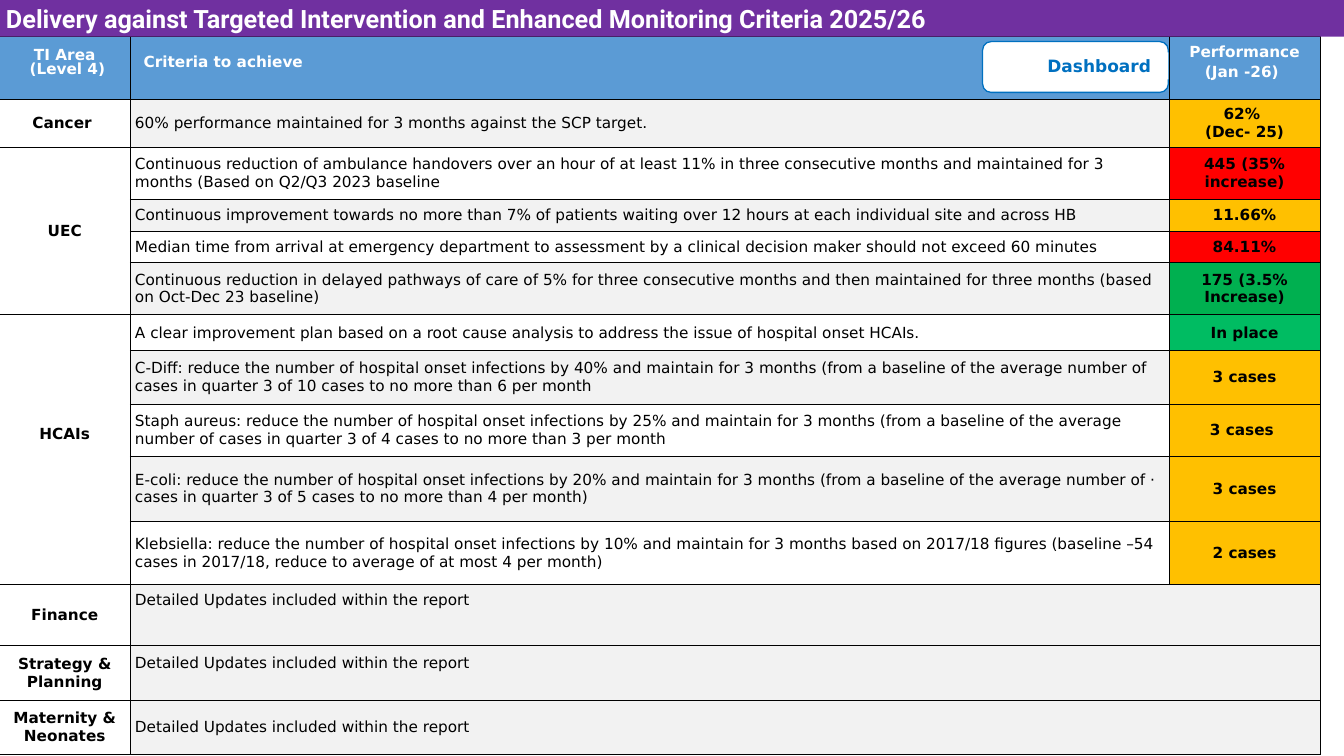
from lxml import etree
from pptx import Presentation
from pptx.dml.color import RGBColor
from pptx.enum import shapes, text
from pptx.oxml import ns
from pptx.util import Cm, Pt

WHITE = RGBColor(0xFF, 0xFF, 0xFF)
BLACK = RGBColor(0, 0, 0)
GREY = RGBColor(0xF2, 0xF2, 0xF2)
BLUE = RGBColor(0x5B, 0x9B, 0xD5)
NAVY = RGBColor(0x00, 0x70, 0xC0)
PURPLE = RGBColor(0x70, 0x30, 0xA0)
AMBER = RGBColor(0xFF, 0xC0, 0x00)
RED = RGBColor(0xFF, 0, 0)
GREEN = RGBColor(0x00, 0xB0, 0x50)
JADE = RGBColor(0x00, 0xBC, 0x62)

SANS = "DejaVu Sans"
COLS = [5.44, 43.18, 6.27]
UPDATE = "Detailed Updates included within the report"
HEAD = ["TI Area\n (Level 4)", "Criteria to achieve", "Performance\n(Jan -26) "]

# Row height, area, criterion, criterion fill, result, result fill
ROWS = [
    (2.01, "Cancer ", "60% performance maintained for 3 months against the SCP target.",
     GREY, "62% \n(Dec- 25)", AMBER),
    (2.16, "UEC", "Continuous reduction of ambulance handovers over an hour of at least 11% in "
     "three consecutive months and maintained for 3 months (Based on Q2/Q3 2023 baseline",
     WHITE, "445 (35% increase)", RED),
    (1.32, "", "Continuous improvement towards no more than 7% of patients waiting over 12 hours "
     "at each individual site and across HB", GREY, "11.66%", AMBER),
    (1.32, "", "Median time from arrival at emergency department to assessment by a clinical "
     "decision maker should not exceed 60 minutes", WHITE, "84.11%", RED),
    (2.16, "", "Continuous reduction in delayed pathways of care of 5% for three consecutive "
     "months and then maintained for three months (based on Oct-Dec 23 baseline)",
     GREY, "175 (3.5% Increase)", GREEN),
    (1.5, "HCAIs", "A clear improvement plan based on a root cause analysis to address the issue "
     "of hospital onset HCAIs.", WHITE, "In place", JADE),
    (2.21, "", "C-Diff: reduce the number of hospital onset infections by 40% and maintain for 3 "
     "months (from a baseline of the average number of cases in quarter 3 of 10 cases to no more "
     "than 6 per month", GREY, "3 cases", AMBER),
    (2.18, "", "Staph aureus: reduce the number of hospital onset infections by 25% and maintain "
     "for 3 months (from a baseline of the average number of cases in quarter 3 of 4 cases to no "
     "more than 3 per month", WHITE, "3 cases ", AMBER),
    (2.69, "", "E-coli: reduce the number of hospital onset infections by 20% and maintain for 3 "
     "months (from a baseline of the average number of · cases in quarter 3 of 5 cases to no more "
     "than 4 per month)", GREY, "3 cases", AMBER),
    (2.64, "", "Klebsiella: reduce the number of hospital onset infections by 10% and maintain "
     "for 3 months based on 2017/18 figures (baseline –54 cases in 2017/18, reduce to average of "
     "at most 4 per month)", WHITE, "2 cases", AMBER),
    (1.32, "Finance", UPDATE, GREY, "", GREY),
    (1.22, "", "", GREY, "", GREY),
    (2.26, "Strategy & Planning", UPDATE, GREY, "", GREY),
    (2.26, "Maternity & Neonates", UPDATE, GREY, "", GREY),
]
# First row, first column, last row, last column
SPANS = [(2, 0, 5, 0), (6, 0, 10, 0), (11, 0, 12, 0)] + [(r, 1, r, 2) for r in range(11, 15)]
FIN = 11  # first of the two finance rows, which have no line between them


def style(par, size, face, color, bold):
    font = par.font
    font.size, font.name, font.bold = Pt(size), face, bold
    font.color.rgb = color


def edge(cell, side, shown=True):
    props = cell._tc.get_or_add_tcPr()
    line = etree.SubElement(props, ns.qn("a:ln" + side), w=str(Pt(1)))
    if shown:
        fill = etree.SubElement(line, ns.qn("a:solidFill"))
        etree.SubElement(fill, ns.qn("a:srgbClr"), val=str(BLACK))
    else:
        etree.SubElement(line, ns.qn("a:noFill"))


def put(cell, words, fill, color=BLACK, bold=True, center=True, pad=(0.2, 0.2)):
    cell.fill.solid()
    cell.fill.fore_color.rgb = fill
    cell.vertical_anchor = text.MSO_ANCHOR.MIDDLE
    cell.margin_left = cell.margin_right = Cm(pad[0])
    cell.margin_top = cell.margin_bottom = Cm(pad[1])
    cell.text_frame.text = words
    for par in cell.text_frame.paragraphs:
        par.alignment = text.PP_ALIGN.CENTER if center else text.PP_ALIGN.LEFT
        style(par, 18, SANS, color, bold)


def grid(slide):
    heights = [2.59] + [row[0] for row in ROWS]
    frame = slide.shapes.add_table(len(heights), len(COLS), Cm(-0.03), Cm(1.52),
                                   Cm(sum(COLS)), Cm(sum(heights)))
    table = frame.table
    table.first_row = table.horz_banding = False
    for col, width in zip(table.columns, COLS):
        col.width = Cm(width)
    for row, height in zip(table.rows, heights):
        row.height = Cm(height)

    # Borders
    for r in range(len(heights)):
        for c in range(len(COLS)):
            for side in "LRTB":
                gap = c > 0 and (r, side) in ((FIN, "B"), (FIN + 1, "T"))
                edge(table.cell(r, c), side, not gap)

    # Header row
    for c, words in enumerate(HEAD):
        cell = table.cell(0, c)
        put(cell, words, BLUE, WHITE, center=c != 1, pad=(0.56, 0.28))
        for i, par in enumerate(cell.text_frame.paragraphs):
            par.line_spacing = Pt(8)
            if i:
                par.space_before = Pt(8 if c == 0 else 16)

    # Body rows
    for r, (_, area, goal, tint, result, shade) in enumerate(ROWS, 1):
        put(table.cell(r, 0), area, WHITE)
        put(table.cell(r, 1), goal, tint, bold=False, center=False)
        put(table.cell(r, 2), result, shade)
    for top, left, end, right in SPANS:
        table.cell(top, left).merge(table.cell(end, right))

    # Labels that sit above the middle
    table.cell(6, 0).margin_bottom = Cm(1.45)
    table.cell(13, 1).margin_bottom = Cm(1)


def box(slide, kind, place, fill, line=None):
    shape = slide.shapes.add_shape(kind, *[Cm(n) for n in place])
    shape.shadow.inherit = False
    shape.fill.solid()
    shape.fill.fore_color.rgb = fill
    if line is None:
        shape.line.fill.background()
    else:
        shape.line.color.rgb = line
        shape.line.width = Pt(1.5)
    return shape


def label(shape, words, size, face, color):
    frame = shape.text_frame
    frame.text = words
    frame.word_wrap = True
    frame.vertical_anchor = text.MSO_ANCHOR.TOP
    par = frame.paragraphs[0]
    par.alignment = text.PP_ALIGN.LEFT
    style(par, size, face, color, True)


def main():
    deck = Presentation()
    deck.slide_width, deck.slide_height = Cm(55.86), Cm(31.42)
    slide = deck.slides.add_slide(deck.slide_layouts[6])
    kind = shapes.MSO_SHAPE

    grid(slide)

    # Title bar
    bar = box(slide, kind.RECTANGLE, (0, 0, 55.86, 1.52), PURPLE)
    label(bar, "Delivery against Targeted Intervention and Enhanced Monitoring Criteria 2025/26",
          29.7, "Roboto", WHITE)

    # Dashboard button
    box(slide, kind.ROUNDED_RECTANGLE, (40.84, 1.73, 7.72, 2.11), WHITE, NAVY)
    tag = box(slide, kind.RECTANGLE, (43.28, 2.18, 5.28, 1.12), WHITE)
    label(tag, "Dashboard", 20, SANS, NAVY)

    deck.save("out.pptx")


if __name__ == "__main__":
    main()
